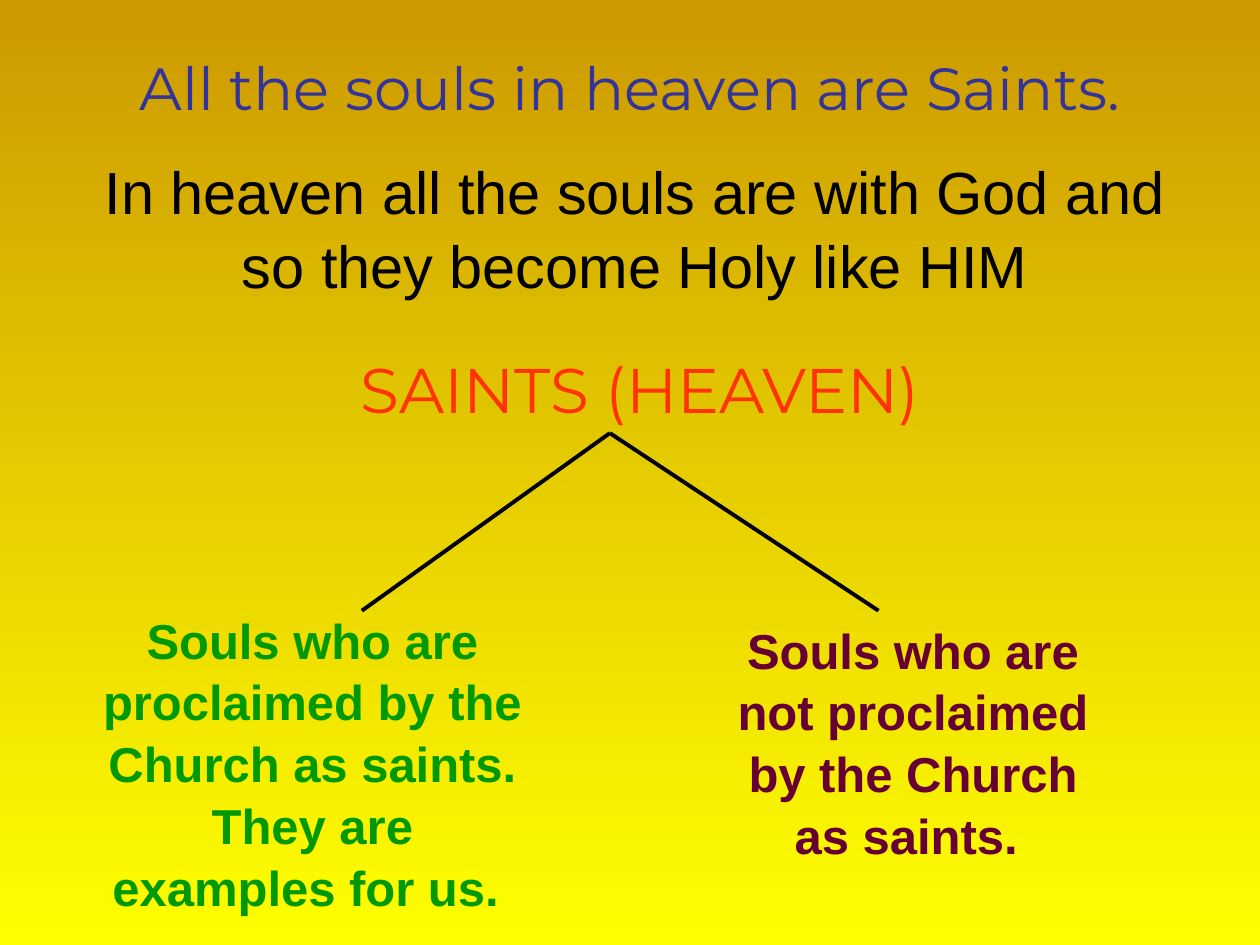
from lxml.etree import SubElement
from pptx import Presentation
from pptx.dml.color import RGBColor
from pptx.enum.shapes import MSO_CONNECTOR
from pptx.enum.text import MSO_ANCHOR, PP_ALIGN
from pptx.oxml.ns import qn
from pptx.util import Pt

COLORS = {
    "gold": "CC9900", "yellow": "FFFF00", "blue": "333399", "black": "000000",
    "red": "FF3300", "green": "009900", "maroon": "660033",
}


def color(name):
    return RGBColor.from_string(COLORS[name])


def write_text(frame, text, *, font="Arial", size=28, ink="black", bold=False,
               spacing=None):
    para = frame.paragraphs[0]
    para.alignment = PP_ALIGN.CENTER
    para.line_spacing = spacing
    span = para.add_run()
    span.text = text
    span.font.name = font
    span.font.size = Pt(size)
    span.font.bold = bold
    span.font.color.rgb = color(ink)


class SlideBuilder:
    def __init__(self, page):
        self.page = page
        self.heading_font = "Montserrat"
        self.line_width = 2.25
        self.body_spacing = 1.05

    def background(self, top, bottom):
        fill = self.page.background.fill
        fill.gradient()
        fill.gradient_angle = 270
        for stop, name, position in zip(fill.gradient_stops, (top, bottom), (0, 1)):
            stop.color.rgb = color(name)
            stop.position = position

    def text(self, left, top, width, height, text, anchor=MSO_ANCHOR.TOP, **style):
        box = self.page.shapes.add_textbox(Pt(left), Pt(top), Pt(width), Pt(height))
        box.text_frame.word_wrap = True
        box.text_frame.vertical_anchor = anchor
        write_text(box.text_frame, text, **style)

    def heading(self, *place, **style):
        self.text(*place, font=self.heading_font, **style)

    def body(self, *place, **style):
        self.text(*place, spacing=self.body_spacing, **style)

    def line(self, start, end):
        line = self.page.shapes.add_connector(
            MSO_CONNECTOR.STRAIGHT, *map(Pt, (*start, *end)))
        line.line.color.rgb = color("black")
        line.line.width = Pt(self.line_width)
        SubElement(line._element.spPr, qn("a:effectLst"))


def main():
    deck = Presentation()
    deck.slide_width, deck.slide_height = Pt(720), Pt(540)
    slide = SlideBuilder(deck.slides.add_slide(deck.slide_layouts[6]))
    slide.background("gold", "yellow")

    slide.heading(36, 21.6, 648, 55.4, "All the souls in heaven are Saints.",
                  anchor=MSO_ANCHOR.MIDDLE, size=34, ink="blue")
    slide.body(42.5, 82.8, 640.8, 88.6,
               "In heaven all the souls are with God and so they become Holy like HIM",
               size=34)
    slide.heading(144.7, 196.6, 442, 50.4, "SAINTS (HEAVEN)", size=36, ink="red")

    fork = (348.5, 247.5)
    for branch_end in ((206.8, 349), (502, 349)):
        slide.line(fork, branch_end)

    slide.body(48.2, 343.5, 260.6, 175.7,
               "Souls who are proclaimed by the Church as saints. "
               "They are examples for us. ", ink="green", bold=True)
    slide.body(405.4, 349.2, 232.6, 141.8,
               "Souls who are not proclaimed by the Church as saints. ",
               ink="maroon", bold=True)
    deck.save("out.pptx")


if __name__ == "__main__":
    main()
